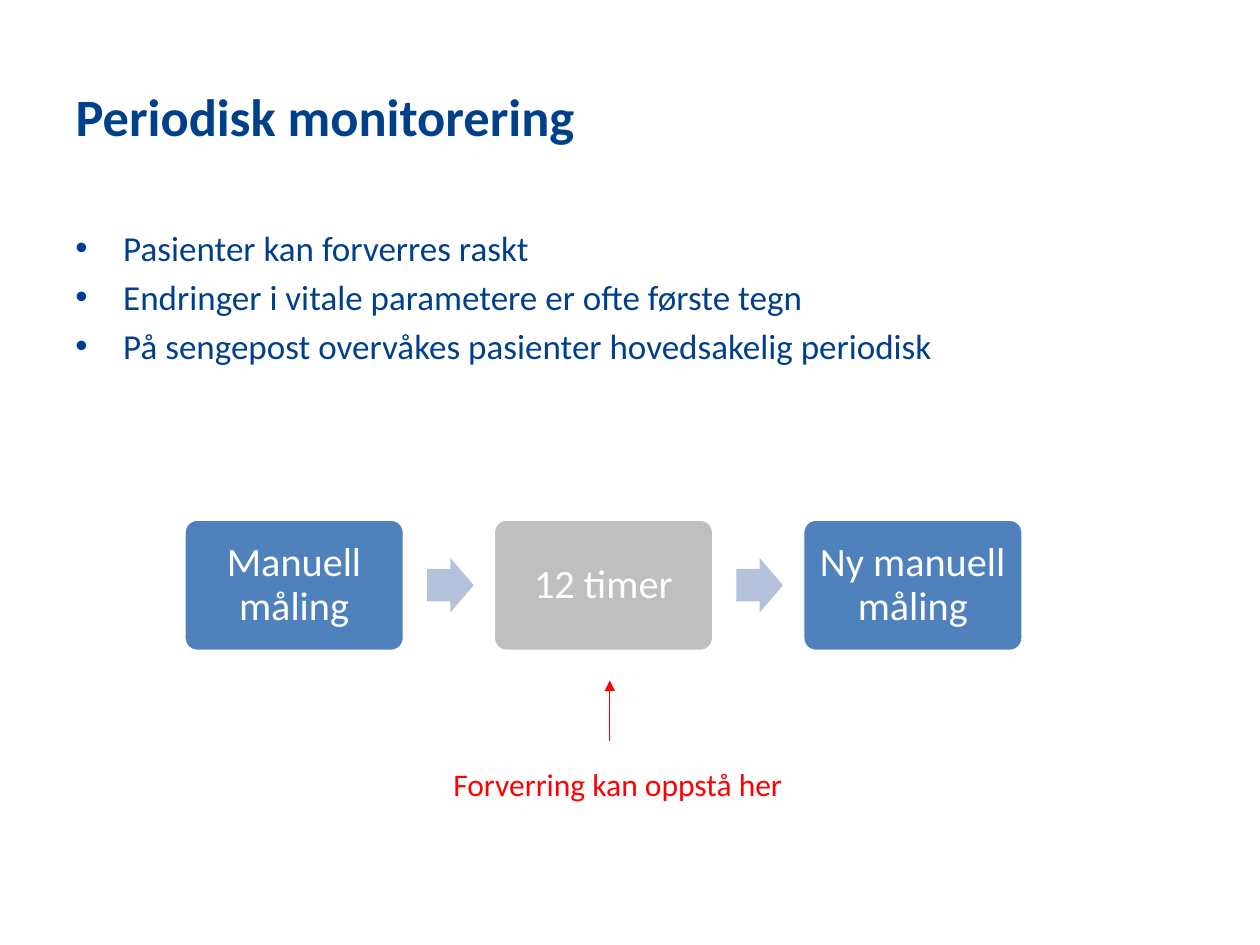
import dataclasses

import pptx
import pptx.dml.color
import pptx.enum.shapes
import pptx.enum.text
import pptx.oxml.ns
import pptx.util
from lxml import etree

Inches = pptx.util.Inches
Pt = pptx.util.Pt
SHAPE = pptx.enum.shapes.MSO_SHAPE
ALIGN = pptx.enum.text.PP_ALIGN
ANCHOR = pptx.enum.text.MSO_ANCHOR
qn = pptx.oxml.ns.qn


@dataclasses.dataclass(frozen=True)
class Theme:
    font: str = "Calibri"
    navy: str = "00408B"
    blue: str = "4F81BD"
    grey: str = "BFBFBF"
    pale_blue: str = "B3C1DB"
    red: str = "FF0000"
    white: str = "FFFFFF"
    title_size: int = 30
    step_size: int = 23
    bullet_size: int = 20
    note_size: int = 18


THEME = Theme()

BULLETS = [
    "Pasienter kan forverres raskt",
    "Endringer i vitale parametere er ofte første tegn",
    "På sengepost overvåkes pasienter hovedsakelig periodisk",
]
STEPS = [
    ("Manuell måling", THEME.blue),
    ("12 timer", THEME.grey),
    ("Ny manuell måling", THEME.blue),
]
STEP_LEFT, STEP_TOP, STEP_WIDTH, STEP_HEIGHT = 1.46, 4.12, 1.75, 1.05
STEP_PITCH = 2.455
ARROW_OFFSET, ARROW_WIDTH, ARROW_HEIGHT = 1.93, 0.37, 0.43


def rgb(color):
    return pptx.dml.color.RGBColor.from_string(color)


def add_run(paragraph, text, size, color, bold=False):
    run = paragraph.add_run()
    run.text = text
    run.font.name = THEME.font
    run.font.size = Pt(size)
    run.font.bold = bold
    run.font.color.rgb = rgb(color)


def set_title(slide, text):
    title = slide.shapes.title
    title.left, title.top = Inches(0.5), Inches(0.52)
    title.width, title.height = Inches(9), Inches(0.79)
    title.text_frame.vertical_anchor = ANCHOR.MIDDLE
    paragraph = title.text_frame.paragraphs[0]
    paragraph.alignment = ALIGN.LEFT
    add_run(paragraph, text, THEME.title_size, THEME.navy, bold=True)


def add_text_box(slide, left, top, width, height):
    box = slide.shapes.add_textbox(
        Inches(left), Inches(top), Inches(width), Inches(height))
    box.text_frame.word_wrap = True
    return box.text_frame


def add_bullets(slide, items):
    frame = add_text_box(slide, 0.5, 1.75, 9, 1.4)
    for index, item in enumerate(items):
        paragraph = frame.paragraphs[0] if index == 0 else frame.add_paragraph()
        properties = paragraph._p.get_or_add_pPr()
        properties.set("marL", str(Inches(0.38)))
        properties.set("indent", str(-Inches(0.38)))
        etree.SubElement(properties, qn("a:buFont"), typeface="Arial")
        etree.SubElement(properties, qn("a:buChar"), char="•")
        if index:
            paragraph.space_before = Pt(0.2 * THEME.bullet_size)
        add_run(paragraph, item, THEME.bullet_size, THEME.navy)


def add_filled_shape(slide, kind, left, top, width, height, fill):
    shape = slide.shapes.add_shape(
        kind, Inches(left), Inches(top), Inches(width), Inches(height))
    shape.shadow.inherit = False
    shape.fill.solid()
    shape.fill.fore_color.rgb = rgb(fill)
    shape.line.fill.background()
    return shape


def add_step(slide, left, label, fill):
    step = add_filled_shape(slide, SHAPE.ROUNDED_RECTANGLE, left, STEP_TOP,
                            STEP_WIDTH, STEP_HEIGHT, fill)
    step.adjustments[0] = 0.1
    step.line.color.rgb = rgb(THEME.white)
    step.line.width = Pt(2)
    frame = step.text_frame
    frame.word_wrap = True
    frame.vertical_anchor = ANCHOR.MIDDLE
    frame.margin_left = frame.margin_right = Inches(0.09)
    paragraph = frame.paragraphs[0]
    paragraph.alignment = ALIGN.CENTER
    paragraph.line_spacing = 0.9
    add_run(paragraph, label, THEME.step_size, THEME.white)


def add_process(slide, steps):
    arrow_top = STEP_TOP + (STEP_HEIGHT - ARROW_HEIGHT) / 2
    for index, (label, fill) in enumerate(steps):
        left = STEP_LEFT + index * STEP_PITCH
        add_step(slide, left, label, fill)
        if index < len(steps) - 1:
            arrow = add_filled_shape(
                slide, SHAPE.RIGHT_ARROW, left + ARROW_OFFSET, arrow_top,
                ARROW_WIDTH, ARROW_HEIGHT, THEME.pale_blue)
            arrow.adjustments[0] = 0.6
            arrow.adjustments[1] = 0.5


def add_warning(slide, text):
    frame = add_text_box(slide, 3.5, 6.02, 2.83, 0.4)
    add_run(frame.paragraphs[0], text, THEME.note_size, THEME.red)

    pointer = slide.shapes.add_connector(
        pptx.enum.shapes.MSO_CONNECTOR.STRAIGHT,
        Inches(4.84), Inches(5.88), Inches(4.84), Inches(5.4))
    pointer.line.color.rgb = rgb(THEME.red)
    pointer.line.width = Pt(0.75)
    etree.SubElement(pointer.line._get_or_add_ln(), qn("a:tailEnd"),
                     type="triangle")
    etree.SubElement(pointer._element.spPr, qn("a:effectLst"))


def main():
    presentation = pptx.Presentation()
    presentation.slide_width = Inches(10)
    presentation.slide_height = Inches(7.5)
    title_only = presentation.slide_layouts[5]
    slide = presentation.slides.add_slide(title_only)

    # Heading and key points
    set_title(slide, "Periodisk monitorering")
    add_bullets(slide, BULLETS)

    # Measurement process with the unmonitored interval marked
    add_process(slide, STEPS)
    add_warning(slide, "Forverring kan oppstå her")

    presentation.save("out.pptx")


if __name__ == "__main__":
    main()
